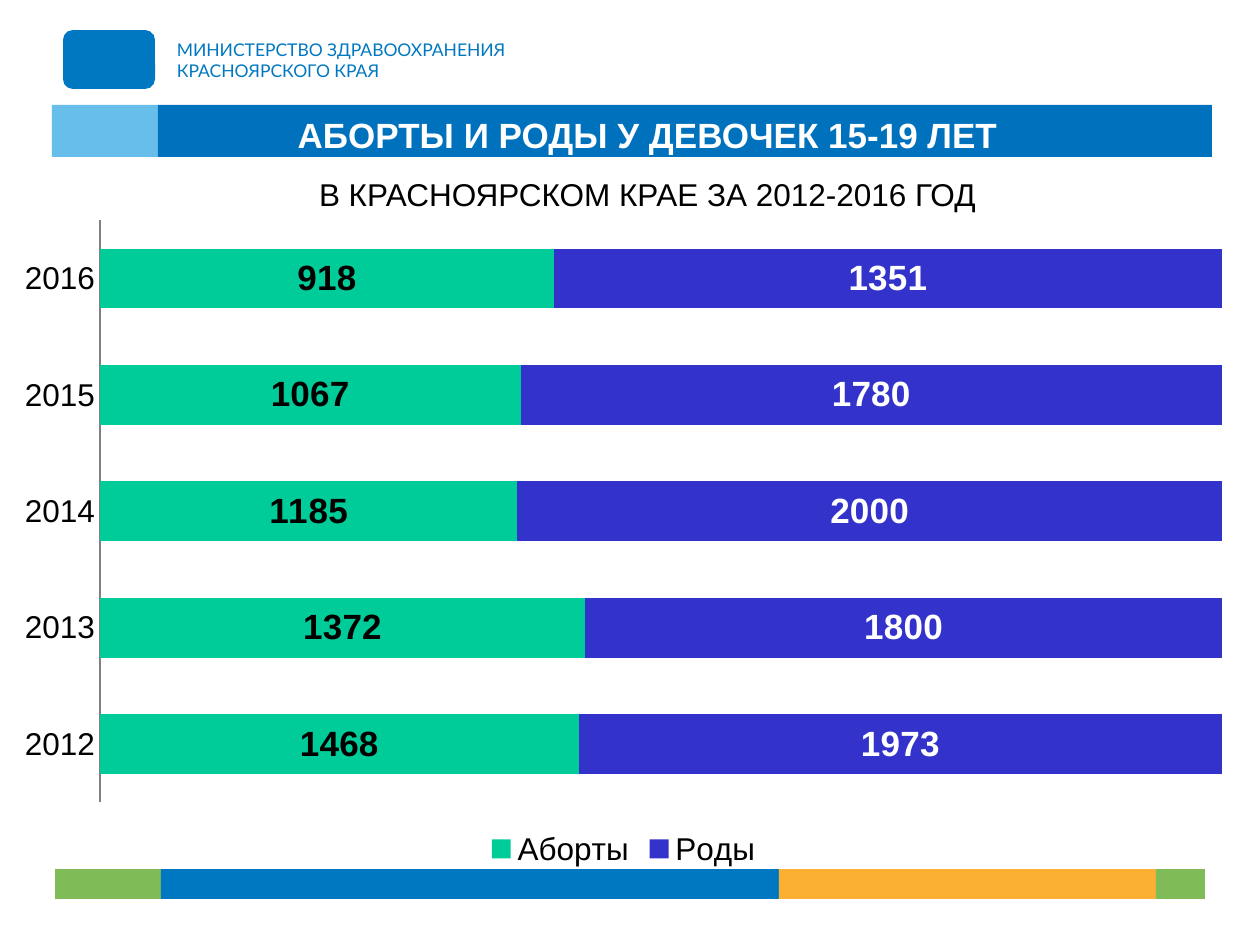
from dataclasses import dataclass

from pptx import Presentation
from pptx.chart.data import CategoryChartData
from pptx.dml.color import RGBColor
from pptx.enum.chart import XL_CHART_TYPE, XL_LABEL_POSITION, XL_LEGEND_POSITION, XL_TICK_MARK
from pptx.enum.shapes import MSO_SHAPE
from pptx.enum.text import MSO_ANCHOR, MSO_AUTO_SIZE, PP_ALIGN
from pptx.util import Emu, Pt

RECT, ROUNDED = MSO_SHAPE.RECTANGLE, MSO_SHAPE.ROUNDED_RECTANGLE
BAR = XL_CHART_TYPE.BAR_STACKED_100
BOTTOM, CENTER_LABEL = XL_LEGEND_POSITION.BOTTOM, XL_LABEL_POSITION.CENTER
NO_TICK = XL_TICK_MARK.NONE
TOP, CENTER, LEFT = MSO_ANCHOR.TOP, PP_ALIGN.CENTER, PP_ALIGN.LEFT
NO_FIT = MSO_AUTO_SIZE.NONE


@dataclass(frozen=True)
class Theme:
    """Colours, fonts and type sizes of the slide."""
    blue: str = "0078C1"
    title_blue: str = "0071BC"
    sky: str = "67BEEB"
    green: str = "7FBB56"
    orange: str = "FBB034"
    abortions: str = "00CC99"
    births: str = "3333CC"
    axis: str = "808080"
    black: str = "000000"
    white: str = "FFFFFF"
    body_font: str = "Arial"
    brand_font: str = "Lato"
    title_size: int = 20
    body_size: int = 18
    brand_size: int = 10


THEME = Theme()
YEARS = ("2012", "2013", "2014", "2015", "2016")
SERIES = (
    ("Аборты", (1468, 1372, 1185, 1067, 918), THEME.abortions, THEME.black),
    ("Роды", (1973, 1800, 2000, 1780, 1351), THEME.births, THEME.white),
)


def px(n):
    """Turn pixels into EMU at 126 px to the inch."""
    return Emu(round(n * 914400 / 126))


def set_attrs(obj, **values):
    """Set each attribute given by name."""
    for name, value in values.items():
        setattr(obj, name, value)


def set_font(font, size, color, name=THEME.body_font, bold=False):
    """Format a font."""
    set_attrs(font, size=Pt(size), name=name, bold=bold)
    font.color.rgb = RGBColor.from_string(color)


def add_block(s, kind, box, color):
    """Add a plain filled shape."""
    sp = s.shapes.add_shape(kind, *map(px, box))
    sp.shadow.inherit = False
    sp.fill.solid()
    sp.fill.fore_color.rgb = RGBColor.from_string(color)
    sp.line.fill.background()


def add_band(s, box, parts):
    """Fill a box from left to right with coloured parts."""
    x, y, _, h = box
    for w, color in parts:
        add_block(s, RECT, (x, y, w, h), color)
        x += w


def add_brand(s, box):
    """Place the emblem block and the ministry name."""
    x, y, w, h = box
    add_block(s, ROUNDED, (x, y, 92, h), THEME.blue)
    tf = s.shapes.add_textbox(*map(px, (x + 114, y + 9, w - 114, 42))).text_frame
    set_attrs(tf, word_wrap=True, margin_left=0, margin_top=0, margin_right=0, margin_bottom=0)
    p = tf.paragraphs[0]
    p.alignment = LEFT
    p.text = "МИНИСТЕРСТВО ЗДРАВООХРАНЕНИЯ\vКРАСНОЯРСКОГО КРАЯ"
    for r in p.runs:
        set_font(r.font, THEME.brand_size, THEME.blue, THEME.brand_font)


def add_title(s, box):
    """Place the title and the subtitle under it."""
    sp = s.shapes.title
    set_attrs(sp, **dict(zip(("left", "top", "width", "height"), map(px, box))))
    tf = sp.text_frame
    set_attrs(tf, word_wrap=True, auto_size=NO_FIT, vertical_anchor=TOP)
    lines = (
        ("АБОРТЫ И РОДЫ У ДЕВОЧЕК 15-19 ЛЕТ", THEME.title_size, THEME.white, True, 0),
        ("В КРАСНОЯРСКОМ КРАЕ ЗА 2012-2016 ГОД", THEME.body_size, THEME.black, False, 11),
    )
    for i, (text, size, color, bold, gap) in enumerate(lines):
        p = tf.add_paragraph() if i else tf.paragraphs[0]
        set_attrs(p, alignment=CENTER, line_spacing=1.0, space_before=Pt(gap))
        r = p.add_run()
        r.text = text
        set_font(r.font, size, color, bold=bold)


def add_bar_chart(s, box):
    """Place the stacked chart of shares by year."""
    data = CategoryChartData()
    data.categories = YEARS
    for name, values, _, _ in SERIES:
        data.add_series(name, values)
    chart = s.shapes.add_chart(BAR, *map(px, box), data).chart
    set_attrs(chart, has_title=False, has_legend=True)
    set_font(chart.font, THEME.body_size, THEME.black)
    set_attrs(chart.legend, position=BOTTOM, include_in_layout=False)
    set_attrs(chart.value_axis, visible=False, has_major_gridlines=False,
              minimum_scale=0, maximum_scale=1)
    axis = chart.category_axis
    set_attrs(axis, major_tick_mark=NO_TICK, minor_tick_mark=NO_TICK, has_major_gridlines=False)
    axis.format.line.color.rgb = RGBColor.from_string(THEME.axis)
    plot = chart.plots[0]
    set_attrs(plot, gap_width=95, overlap=100, vary_by_categories=False)
    for series, (_, _, color, label_color) in zip(plot.series, SERIES):
        series.format.fill.solid()
        series.format.fill.fore_color.rgb = RGBColor.from_string(color)
        labels = series.data_labels
        set_attrs(labels, show_value=True, position=CENTER_LABEL)
        set_font(labels.font, THEME.title_size, label_color, bold=True)


def main():
    """Build and save the slide."""
    prs = Presentation()
    set_attrs(prs, slide_width=px(1260), slide_height=px(945))
    s = prs.slides.add_slide(prs.slide_layouts[5])
    add_band(s, (52, 105, 1160, 52), ((106, THEME.sky), (1054, THEME.title_blue)))
    add_brand(s, (63, 30, 617, 59))
    add_band(s, (55, 869, 1150, 30), (
        (106, THEME.green), (618, THEME.blue), (377, THEME.orange), (49, THEME.green)))
    add_bar_chart(s, (0, 207, 1247, 666))
    add_title(s, (35, 107, 1225, 105))
    title = s.shapes.title.element
    title.getparent().append(title)
    prs.save("out.pptx")


if __name__ == "__main__":
    main()
